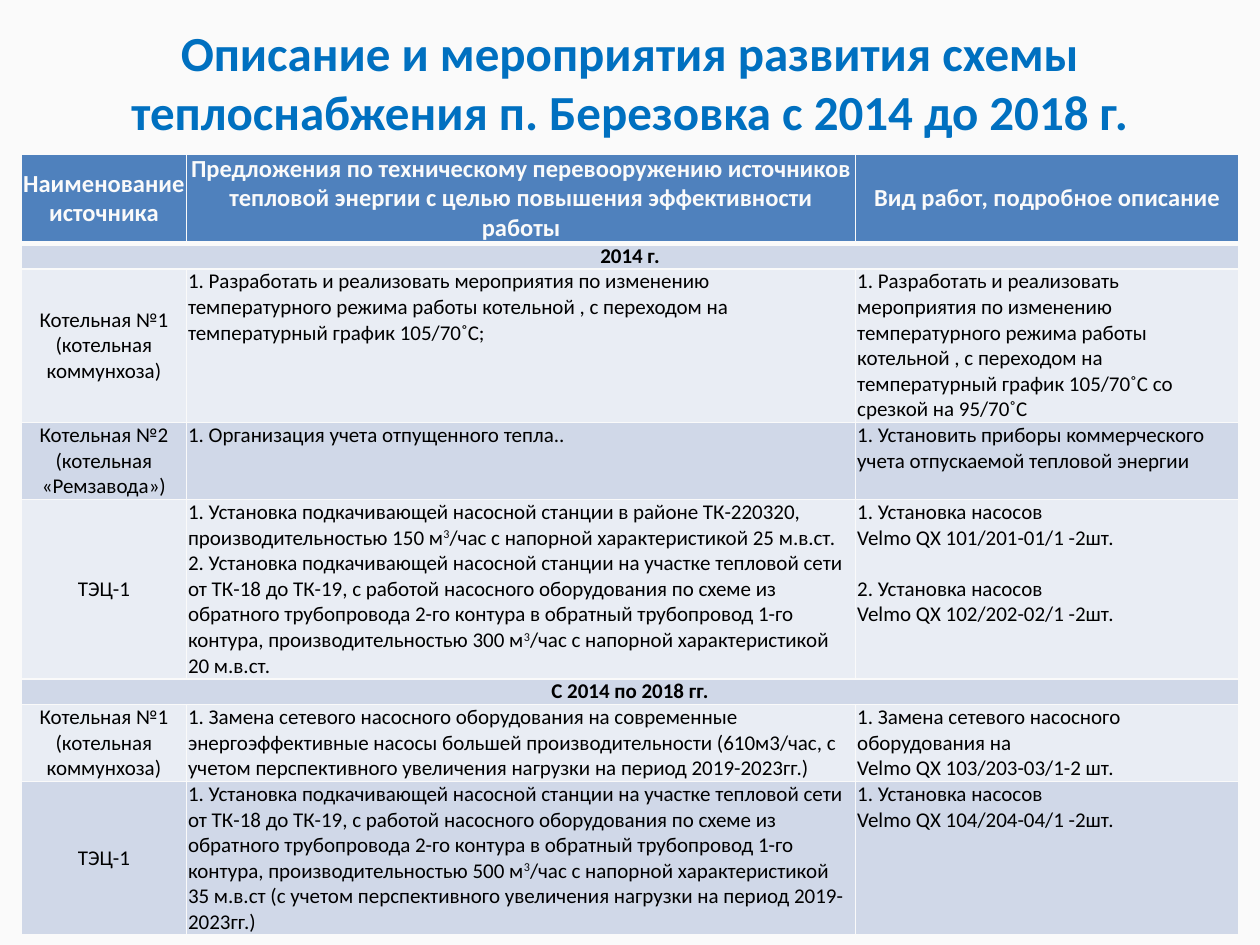
from lxml import etree
from pptx import Presentation
from pptx.dml.color import RGBColor
from pptx.enum import text
from pptx.oxml.ns import qn
from pptx.util import Cm, Pt

FONT = "Calibri"
PAPER, INK, TITLE_BLUE, HEADER_BLUE = "FAFAFA", "000000", "0070C0", "4F81BD"
BANDS = ["E9EDF4", "D0D8E8"]
CENTER, LEFT = text.PP_ALIGN.CENTER, text.PP_ALIGN.LEFT
MIDDLE, TOP = text.MSO_ANCHOR.MIDDLE, text.MSO_ANCHOR.TOP

COLUMN_WIDTHS = [3.33, 13.49, 7.72]
ROW_HEIGHTS = [1.79, 0.51, 3.1, 1.55, 3.61, 0.52, 1.55, 3.08]
SIDE_MARGIN = 0.03
BOILER_1 = "Котельная №1 (котельная коммунхоза)"
REGIME = ("1. Разработать и реализовать мероприятия по изменению температурного "
          "режима работы котельной , с переходом на температурный график 105/70˚С")
STATION = ("Установка подкачивающей насосной станции на участке тепловой сети "
           "от ТК-18 до ТК-19, с работой насосного оборудования по схеме из "
           "обратного трубопровода 2-го контура в обратный трубопровод 1-го "
           "контура, производительностью")

# A row with one entry is a period heading across the table. In the wording,
# a line feed separates paragraphs, \v breaks a line, ^ encloses a superscript.
ROWS = [
    ["Наименование источника",
     "Предложения по техническому перевооружению источников тепловой энергии "
     "с целью повышения эффективности работы",
     "Вид работ, подробное описание"],
    ["2014 г."],
    [BOILER_1, REGIME + ";", REGIME + " со срезкой на 95/70˚С"],
    ["Котельная №2 (котельная «Ремзавода»)",
     "1. Организация учета отпущенного тепла..",
     "1. Установить приборы коммерческого учета отпускаемой тепловой энергии"],
    ["ТЭЦ-1",
     "1. Установка подкачивающей насосной станции в районе ТК-220320, "
     "производительностью 150 м^3^/час с напорной характеристикой 25 м.в.ст.\n"
     f"2. {STATION} 300 м^3^/час с напорной характеристикой 20 м.в.ст.",
     "1. Установка насосов\vVelmo QX 101/201-01/1 -2шт.\n"
     "2. Установка насосов\vVelmo QX 102/202-02/1 -2шт."],
    ["С 2014 по 2018 гг."],
    [BOILER_1,
     "1. Замена сетевого насосного оборудования на современные "
     "энергоэффективные насосы большей производительности (610м3/час, с учетом "
     "перспективного увеличения нагрузки на период 2019-2023гг.)",
     "1. Замена сетевого насосного оборудования на\vVelmo QX 103/203-03/1-2 шт."],
    ["ТЭЦ-1",
     f"1. {STATION} 500 м^3^/час с напорной характеристикой 35 м.в.ст (с учетом "
     "перспективного увеличения нагрузки на период 2019-2023гг.)",
     "1. Установка насосов\vVelmo QX 104/204-04/1 -2шт."],
]


def color(value):
    return RGBColor.from_string(value)


def set_attributes(target, values):
    for name, value in values.items():
        setattr(target, name, value)


def add_run(paragraph, wording, size, ink, bold, raised=False):
    run = paragraph.add_run()
    run.text = wording
    set_attributes(run.font, {"name": FONT, "size": Pt(size), "bold": bold})
    run.font.color.rgb = color(ink)
    if raised:
        run.font._element.set("baseline", "30000")


def write(frame, wording, size, ink, bold, align, gap=0):
    """Fill a text frame; gap is the space in points between paragraphs."""
    for index, content in enumerate(wording.split("\n")):
        paragraph = frame.add_paragraph() if index else frame.paragraphs[0]
        set_attributes(paragraph, {"alignment": align,
                                   "space_before": Pt(gap if index else 0)})
        for number, line in enumerate(content.split("\v")):
            if number:
                paragraph.add_line_break()
            for part, piece in enumerate(line.split("^")):
                add_run(paragraph, piece, size, ink, bold, raised=part % 2 == 1)


def set_borders(cell, bottom):
    properties = cell._tc.get_or_add_tcPr()
    for side, width in {"L": 1, "R": 1, "T": 1, "B": bottom}.items():
        line = etree.SubElement(properties, qn(f"a:ln{side}"), w=str(Pt(width)))
        fill = etree.SubElement(line, qn("a:solidFill"))
        etree.SubElement(fill, qn("a:srgbClr"), val=PAPER)


def format_cell(cell, fill, anchor, bottom):
    set_borders(cell, bottom)
    cell.fill.solid()
    cell.fill.fore_color.rgb = color(fill)
    set_attributes(cell, {"vertical_anchor": anchor,
                          "margin_left": Cm(SIDE_MARGIN),
                          "margin_right": Cm(SIDE_MARGIN),
                          "margin_top": 0, "margin_bottom": 0})


def place_title(slide, left, top, width, height):
    title = slide.shapes.title
    set_attributes(title, {"left": Cm(left), "top": Cm(top),
                           "width": Cm(width), "height": Cm(height)})
    set_attributes(title.text_frame, {"word_wrap": True, "vertical_anchor": MIDDLE,
                                      "auto_size": text.MSO_AUTO_SIZE.NONE})
    write(title.text_frame,
          "Описание и мероприятия развития схемы теплоснабжения "
          "п. Березовка с 2014 до 2018 г.", 28, TITLE_BLUE, True, CENTER)


def place_measures_table(slide, left, top):
    table = slide.shapes.add_table(
        len(ROWS), len(COLUMN_WIDTHS), Cm(left), Cm(top),
        Cm(sum(COLUMN_WIDTHS)), Cm(sum(ROW_HEIGHTS))).table
    for column, width in zip(table.columns, COLUMN_WIDTHS):
        column.width = Cm(width)
    for row, height in zip(table.rows, ROW_HEIGHTS):
        row.height = Cm(height)

    for row_index, entries in enumerate(ROWS):
        header, period = row_index == 0, len(entries) == 1
        fill = HEADER_BLUE if header else BANDS[row_index % 2]
        for column_index in range(len(COLUMN_WIDTHS)):
            centered = header or period or column_index == 0
            format_cell(table.cell(row_index, column_index), fill,
                        MIDDLE if centered else TOP, bottom=3 if header else 1)
        if period:
            table.cell(row_index, 0).merge(
                table.cell(row_index, len(COLUMN_WIDTHS) - 1))
        for column_index, wording in enumerate(entries):
            write(table.cell(row_index, column_index).text_frame, wording,
                  size=14 if header else 12, ink=PAPER if header else INK,
                  bold=header or period,
                  align=CENTER if header or column_index == 0 else LEFT,
                  gap=14.6 if column_index == 2 else 0)


def main():
    presentation = Presentation()
    set_attributes(presentation, {"slide_width": Cm(25.4), "slide_height": Cm(19.05)})
    slide = presentation.slides.add_slide(presentation.slide_layouts[5])
    slide.background.fill.solid()
    slide.background.fill.fore_color.rgb = color(PAPER)
    place_title(slide, 1.3, 0.25, 22.78, 2.79)
    place_measures_table(slide, 0.43, 3.1)
    presentation.save("out.pptx")


if __name__ == "__main__":
    main()
